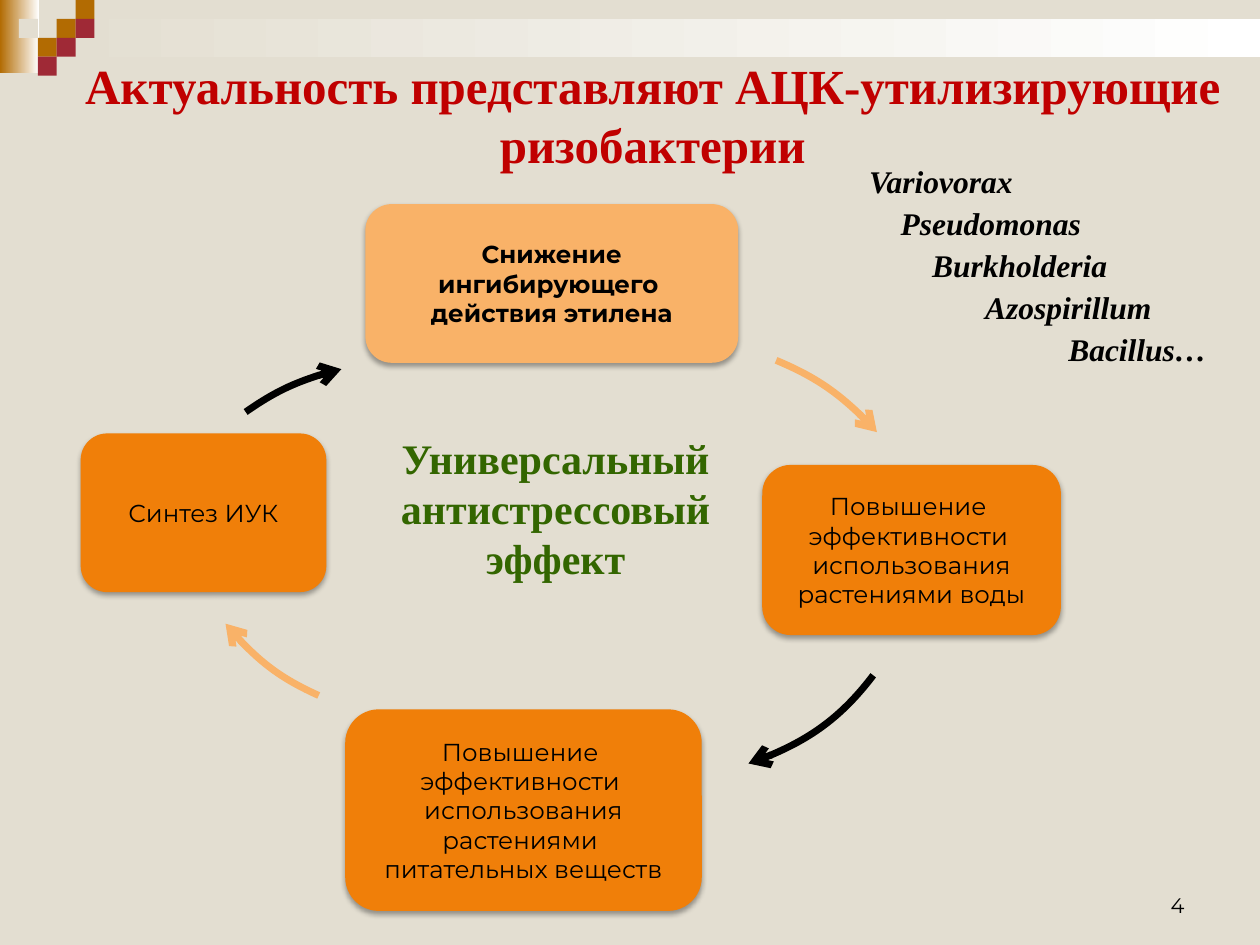
from lxml import etree
from pptx import Presentation
from pptx.dml.color import RGBColor
from pptx.enum.shapes import MSO_SHAPE
from pptx.enum.text import MSO_ANCHOR, PP_ALIGN
from pptx.oxml.ns import qn
from pptx.util import Inches, Pt

RECT, ROUNDED = MSO_SHAPE.RECTANGLE, MSO_SHAPE.ROUNDED_RECTANGLE
LEFT, CENTER, RIGHT = PP_ALIGN.LEFT, PP_ALIGN.CENTER, PP_ALIGN.RIGHT
TOP, MIDDLE, BOTTOM = MSO_ANCHOR.TOP, MSO_ANCHOR.MIDDLE, MSO_ANCHOR.BOTTOM
SANS, SERIF = "Montserrat", "Times New Roman"
SAND, BROWN, WINE, WHITE, BLACK = "E3DED1", "B26B02", "9F2936", "FFFFFF", "000000"
ORANGE, PEACH, RED, GREEN = "F07F09", "F9B268", "C00000", "336600"

CELL = 0.15
BANDS = [
    ((0, 0, 0.31, 0.58), BROWN),
    ((3 * CELL, CELL, 10 - 3 * CELL, 2 * CELL), SAND),
]
MOSAIC = [
    (3, 1, BROWN), (4, 0, BROWN), (4, 1, WINE), (2, 2, BROWN),
    (1, 1, SAND), (3, 2, WINE), (2, 3, WINE),
]
TITLE = ["Актуальность представляют АЦК-утилизирующие ризобактерии"]
CENTRE = ["Универсальный", "антистрессовый", "эффект"]
STEPS = [
    ((2.9, 1.62, 2.96, 1.26), PEACH, True,
     ["Снижение ингибирующего ", "действия этилена"]),
    ((6.05, 3.69, 2.37, 1.35), ORANGE, False,
     ["Повышение ", "эффективности ", "использования", "растениями воды"]),
    ((2.74, 5.63, 2.83, 1.6), ORANGE, False,
     ["Повышение ", "эффективности ", "использования", "растениями ",
      "питательных веществ"]),
    ((0.64, 3.44, 1.95, 1.26), ORANGE, False, ["Синтез ИУК"]),
]
ARCS = [
    (PEACH, [(6.16, 2.86), (6.47, 2.99), (6.74, 3.18), (6.96, 3.43)]),
    (BLACK, [(6.93, 5.36), (6.68, 5.69), (6.34, 5.93), (5.94, 6.06)]),
    (PEACH, [(2.53, 5.52), (2.24, 5.39), (1.99, 5.2), (1.79, 4.95)]),
    (BLACK, [(1.95, 3.27), (2.18, 3.11), (2.44, 2.99), (2.71, 2.93)]),
]
GENERA = [
    ("Variovorax", 6.8, 2.08), ("Pseudomonas", 7.05, 1.8),
    ("Burkholderia", 7.3, 1.75), ("Azospirillum", 7.72, 1.7),
    ("Bacillus…", 8.38, 1.42),
]
GENERA_TOP, GENERA_STEP = 1.24, 1 / 3


def rgb(value):
    return RGBColor.from_string(value)


def inches(place):
    return [Inches(length) for length in place]


def write(shape, lines, font=SERIF, size=18, color=BLACK, bold=False, italic=False,
          align=LEFT, anchor=TOP, margin=None):
    frame = shape.text_frame
    frame.word_wrap = True
    frame.vertical_anchor = anchor
    if margin is not None:
        frame.margin_left = frame.margin_right = Inches(margin)
        frame.margin_top = frame.margin_bottom = Inches(margin)
    for index, line in enumerate(lines):
        para = frame.add_paragraph() if index else frame.paragraphs[0]
        para.alignment = align
        span = para.add_run()
        span.text = line
        span.font.name, span.font.size = font, Pt(size)
        span.font.bold, span.font.italic = bold, italic
        span.font.color.rgb = rgb(color)


def add_text(page, place, lines, **style):
    write(page.shapes.add_textbox(*inches(place)), lines, **style)


def add_block(page, place, color, kind=RECT, fade_to=None):
    block = page.shapes.add_shape(kind, *inches(place))
    block.shadow.inherit = False
    block.line.fill.background()
    if fade_to:
        block.fill.gradient()
        block.fill.gradient_angle = 0
        for stop, tone in zip(block.fill.gradient_stops, (color, fade_to)):
            stop.color.rgb = rgb(tone)
    else:
        block.fill.solid()
        block.fill.fore_color.rgb = rgb(color)
    return block


def add_shadow(shape):
    effects = shape._element.spPr.find(qn("a:effectLst"))
    shadow = etree.SubElement(effects, qn("a:outerShdw"), blurRad=str(Pt(3.1)),
                              dist=str(Pt(1.8)), dir="5400000", rotWithShape="0")
    tone = etree.SubElement(shadow, qn("a:srgbClr"), val=BLACK)
    etree.SubElement(tone, qn("a:alpha"), val="35000")


def add_arc(page, color, points):
    start, *rest = [tuple(inches(point)) for point in points]
    builder = page.shapes.build_freeform(*start)
    builder.add_line_segments(rest, close=False)
    arc = builder.convert_to_shape()
    arc.shadow.inherit = False
    arc.fill.background()
    arc.line.color.rgb = rgb(color)
    arc.line.width = Pt(4)
    segments = list(arc._element.iter(qn("a:lnTo")))
    curve = etree.SubElement(segments[0].getparent(), qn("a:cubicBezTo"))
    for segment in segments:
        curve.append(segment[0])
        segment.getparent().remove(segment)
    etree.SubElement(arc._element.spPr.find(qn("a:ln")), qn("a:tailEnd"), type="arrow")


def main():
    deck = Presentation()
    deck.slide_width, deck.slide_height = Inches(10), Inches(7.5)
    page = deck.slides.add_slide(deck.slide_layouts[6])
    page.background.fill.solid()
    page.background.fill.fore_color.rgb = rgb(SAND)

    for place, color in BANDS:
        add_block(page, place, color, fade_to=WHITE)
    for column, row, color in MOSAIC:
        add_block(page, (column * CELL, row * CELL, CELL, CELL), color)
    add_text(page, (7.17, 6.83, 2.33, 0.5), ["4"], font=SANS, size=12,
             align=RIGHT, anchor=BOTTOM)

    for (place, color, bold, lines), arc in zip(STEPS, ARCS):
        step = add_block(page, place, color, kind=ROUNDED)
        add_shadow(step)
        write(step, lines, font=SANS, size=14, bold=bold, align=CENTER,
              anchor=MIDDLE, margin=0.06)
        add_arc(page, *arc)

    for row, (genus, left, width) in enumerate(GENERA):
        add_text(page, (left, GENERA_TOP + row * GENERA_STEP, width, 0.4),
                 [genus], bold=True, italic=True)
    add_text(page, (3.03, 3.38, 2.76, 1.31), CENTRE, size=24, color=GREEN,
             bold=True, align=CENTER)
    add_text(page, (0.37, 0.39, 9.62, 1.04), TITLE, size=28, color=RED,
             bold=True, align=CENTER)
    deck.save("out.pptx")


if __name__ == "__main__":
    main()
